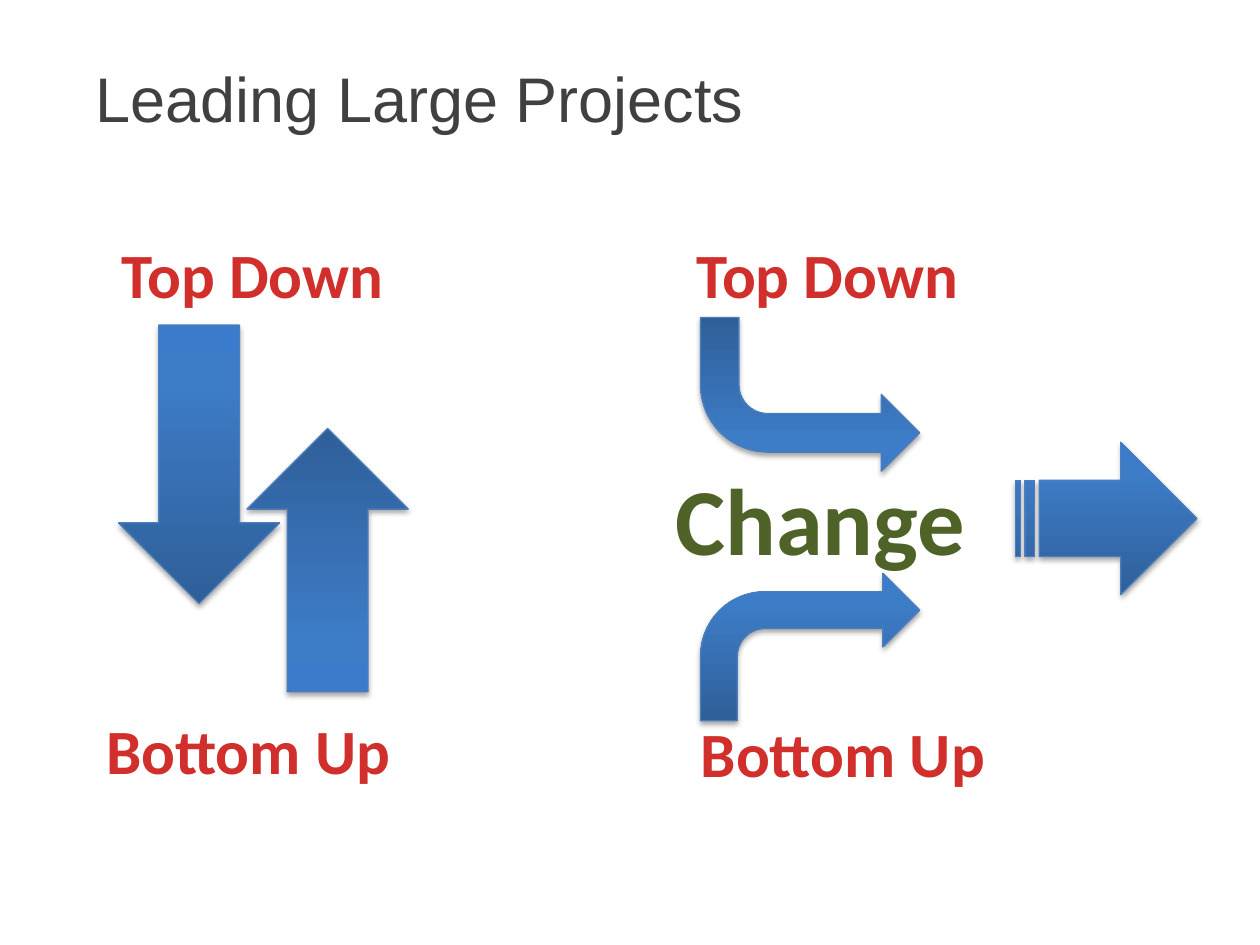
"""Build the slide on leading large projects from the top down and the bottom up."""
from pptx import Presentation
from pptx.dml.color import RGBColor
from pptx.enum.shapes import MSO_SHAPE
from pptx.enum.text import MSO_ANCHOR, PP_ALIGN
from pptx.oxml import parse_xml
from pptx.oxml.ns import nsdecls
from pptx.util import Inches, Pt

BLUES = [(0, "2F5F99"), (80, "3D7CC7"), (100, "3A7CCB")]
REDS = [(0, "FC7C7A"), (75, "D02F2C"), (100, "C70500")]
EDGE, GREY, GREEN = "4B7EBC", "404040", "4F6228"

TITLE = ("Leading Large Projects", (0.66, 0.37, 8.77, 0.8))
CHANGE = ("Change", (5.02, 3.61, 2.98, 1.01))
LABELS = [
    ("Top Down", (5.14, 1.82, 2.85, 0.71)),
    ("Bottom Up", (5.3, 5.62, 2.78, 0.71)),
    ("Top Down", (0.58, 1.82, 2.85, 0.71)),
    ("Bottom Up", (0.58, 5.6, 2.78, 0.71)),
]
ARROWS = [
    (MSO_SHAPE.BENT_ARROW, (5.56, 4.55, 1.74, 1.17), 0, False),
    (MSO_SHAPE.BENT_ARROW, (5.56, 2.52, 1.74, 1.22), 0, True),
    (MSO_SHAPE.STRIPED_RIGHT_ARROW, (8.06, 3.51, 1.44, 1.21), 0, False),
    (MSO_SHAPE.DOWN_ARROW, (0.94, 2.58, 1.28, 2.21), 0, False),
    (MSO_SHAPE.DOWN_ARROW, (1.96, 3.4, 1.28, 2.09), 180, False),
]


def color(code):
    return RGBColor.from_string(code)


def blend(stops, angle):
    marks = "".join(
        f'<a:gs pos="{pos * 1000}"><a:srgbClr val="{code}"/></a:gs>'
        for pos, code in stops)
    return parse_xml(
        f'<a:gradFill {nsdecls("a")} rotWithShape="1"><a:gsLst>{marks}</a:gsLst>'
        f'<a:lin ang="{angle * 60000}" scaled="0"/></a:gradFill>')


def shadow():
    return parse_xml(
        f'<a:effectLst {nsdecls("a")}><a:outerShdw blurRad="{Pt(3.1)}" '
        f'dist="{Pt(1.8)}" dir="5400000" rotWithShape="0"><a:srgbClr val="000000">'
        '<a:alpha val="35000"/></a:srgbClr></a:outerShdw></a:effectLst>')


def outline(code):
    return parse_xml(
        f'<a:ln {nsdecls("a")} w="{Pt(0.75)}"><a:solidFill>'
        f'<a:srgbClr val="{code}"/></a:solidFill></a:ln>')


def add_arrow(slide, kind, place, turn, flip):
    arrow = slide.shapes.add_shape(kind, *map(Inches, place))
    arrow.rotation = turn
    props = arrow._element.spPr
    if flip:
        props.xfrm.set("flipV", "1")
    for part in (blend(BLUES, 270), outline(EDGE), shadow()):
        props.append(part)


def add_text(slide, text, place, size, face="Calibri", bold=True,
             align=PP_ALIGN.CENTER, anchor=MSO_ANCHOR.TOP):
    frame = slide.shapes.add_textbox(*map(Inches, place)).text_frame
    frame.word_wrap = True
    frame.vertical_anchor = anchor
    frame.text = text
    line = frame.paragraphs[0]
    line.alignment = align
    run = line.runs[0]
    run.font.name, run.font.size, run.font.bold = face, Pt(size), bold
    return run


def main():
    deck = Presentation()
    deck.slide_width, deck.slide_height = Inches(10), Inches(7.5)
    slide = deck.slides.add_slide(deck.slide_layouts[6])
    title = add_text(slide, *TITLE, 36, "Arial", False, PP_ALIGN.LEFT,
                     MSO_ANCHOR.MIDDLE)
    title.font.color.rgb = color(GREY)
    for arrow in ARROWS:
        add_arrow(slide, *arrow)
    for label in LABELS:
        run = add_text(slide, *label, 36)
        run._r.get_or_add_rPr().insert(0, blend(REDS, 90))
    change = add_text(slide, *CHANGE, 54)
    change.font.color.rgb = color(GREEN)
    change._r.get_or_add_rPr().insert(0, outline(GREEN))
    deck.save("out.pptx")


if __name__ == "__main__":
    main()
